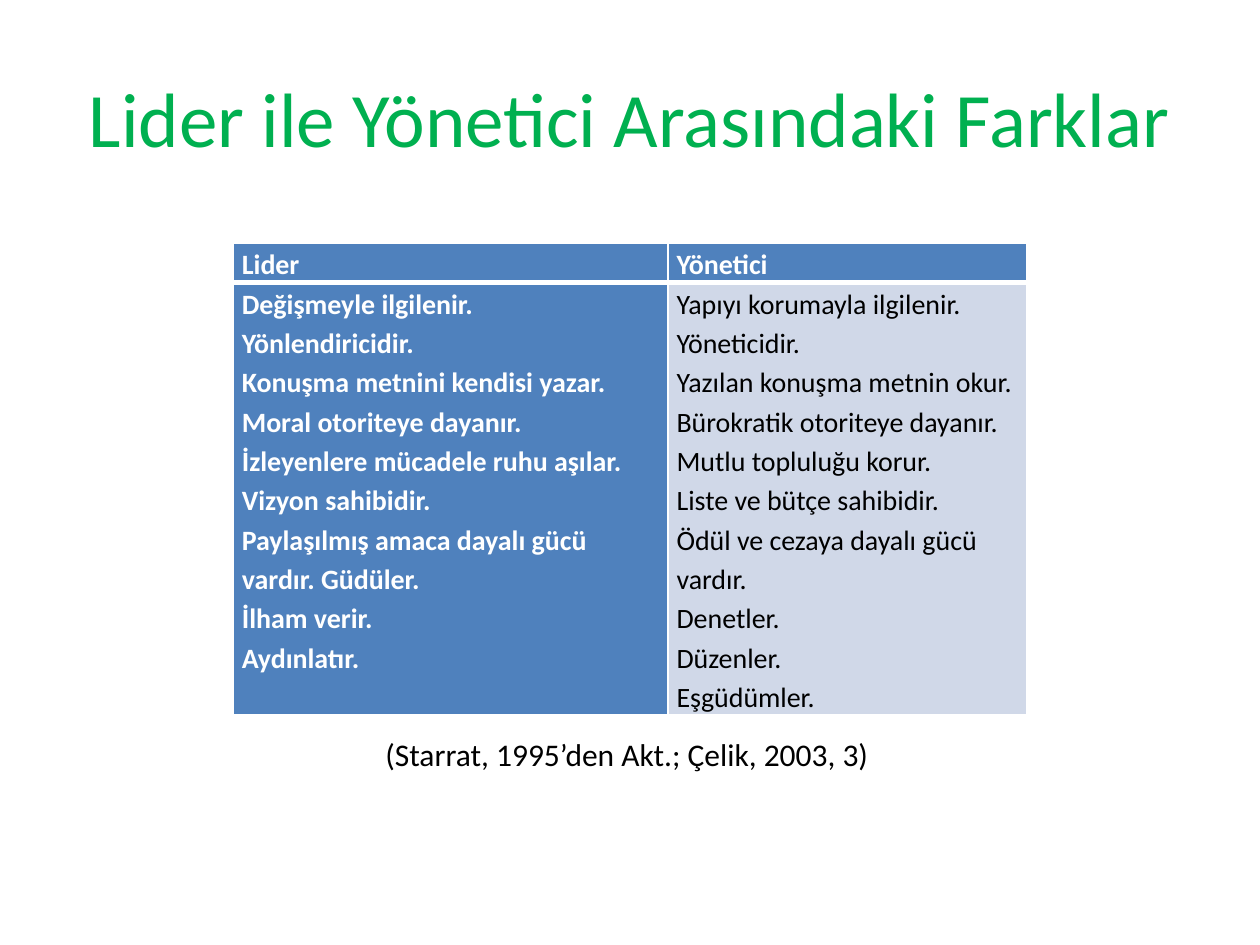
from lxml.etree import SubElement
from pptx import Presentation
from pptx.dml.color import RGBColor
from pptx.enum.text import MSO_ANCHOR, PP_ALIGN
from pptx.oxml.ns import qn
from pptx.util import Inches, Pt

GREEN, BLUE, PALE, WHITE, BLACK = "00B050", "4F81BD", "D0D8E8", "FFFFFF", "000000"

LEADER_TRAITS = [
    "Değişmeyle ilgilenir.",
    "Yönlendiricidir.",
    "Konuşma metnini kendisi yazar.",
    "Moral otoriteye dayanır.",
    "İzleyenlere mücadele ruhu aşılar.",
    "Vizyon sahibidir.",
    "Paylaşılmış amaca dayalı gücü vardır. Güdüler.",
    "İlham verir.",
    "Aydınlatır.",
]
MANAGER_TRAITS = [
    "Yapıyı korumayla ilgilenir.",
    "Yöneticidir.",
    "Yazılan konuşma metnin okur.",
    "Bürokratik otoriteye dayanır.",
    "Mutlu topluluğu korur.",
    "Liste ve bütçe sahibidir.",
    "Ödül ve cezaya dayalı gücü vardır.",
    "Denetler.",
    "Düzenler.",
    "Eşgüdümler.",
]


def rgb(color):
    """Turn a hex string into a colour."""
    return RGBColor.from_string(color)


def write_lines(frame, lines, size, color, bold=False, **paragraph_format):
    """Write one formatted paragraph per line."""
    for index, line in enumerate(lines):
        paragraph = frame.add_paragraph() if index else frame.paragraphs[0]
        for name, value in paragraph_format.items():
            setattr(paragraph, name, value)
        run = paragraph.add_run()
        run.text = line
        for name, value in {"name": "Calibri", "size": Pt(size), "bold": bold}.items():
            setattr(run.font, name, value)
        run.font.color.rgb = rgb(color)


def add_text(slide, box, text, size, color, frame_format, **paragraph_format):
    """Add a text box holding one line."""
    frame = slide.shapes.add_textbox(*map(Inches, box)).text_frame
    for name, value in frame_format.items():
        setattr(frame, name, value)
    write_lines(frame, [text], size, color, **paragraph_format)


def add_borders(cell, widths):
    """Draw white cell borders, with widths in points by side."""
    properties = cell._tc.get_or_add_tcPr()
    for side, width in widths.items():
        line = SubElement(properties, qn(f"a:ln{side}"), w=str(Pt(width)))
        SubElement(SubElement(line, qn("a:solidFill")), qn("a:srgbClr"), val=WHITE)


def fill_cell(cell, lines, fill, color, bold, borders):
    """Style a table cell and write its lines."""
    margins = {"margin_left": 0.07, "margin_right": 0.07, "margin_top": 0, "margin_bottom": 0}
    for name, value in margins.items():
        setattr(cell, name, Inches(value))
    add_borders(cell, borders)
    cell.fill.solid()
    cell.fill.fore_color.rgb = rgb(fill)
    write_lines(cell.text_frame, lines, 16, color, bold, line_spacing=1.15)


def add_comparison(slide):
    """Add the table comparing leader and manager."""
    widths, heights = (3.45, 2.85), (0.31, 3.43)
    table = slide.shapes.add_table(
        2, 2, Inches(1.85), Inches(1.93), Inches(sum(widths)), Inches(sum(heights))
    ).table
    for column, width in zip(table.columns, widths):
        column.width = Inches(width)
    for row, height in zip(table.rows, heights):
        row.height = Inches(height)
    header_borders = {"L": 1, "R": 1, "T": 1, "B": 3}
    trait_borders = {"L": 1, "R": 1, "T": 3, "B": 1}
    for column, heading in enumerate(("Lider", "Yönetici")):
        fill_cell(table.cell(0, column), [heading], BLUE, WHITE, True, header_borders)
    fill_cell(table.cell(1, 0), LEADER_TRAITS, BLUE, WHITE, True, trait_borders)
    fill_cell(table.cell(1, 1), MANAGER_TRAITS, PALE, BLACK, False, trait_borders)


def main():
    """Build and save the slide."""
    presentation = Presentation()
    presentation.slide_width, presentation.slide_height = Inches(10), Inches(7.5)
    slide = presentation.slides.add_slide(presentation.slide_layouts[6])
    add_text(slide, (0.5, 0.3, 9, 1.25), "Lider ile Yönetici Arasındaki Farklar", 44, GREEN,
             {"word_wrap": True, "vertical_anchor": MSO_ANCHOR.MIDDLE},
             alignment=PP_ALIGN.CENTER)
    add_comparison(slide)
    add_text(slide, (2.96, 5.74, 4.08, 0.43), "(Starrat, 1995’den Akt.; Çelik, 2003, 3)", 18,
             BLACK, {"word_wrap": False}, line_spacing=1.15, space_after=Pt(10))
    presentation.save("out.pptx")


if __name__ == "__main__":
    main()
